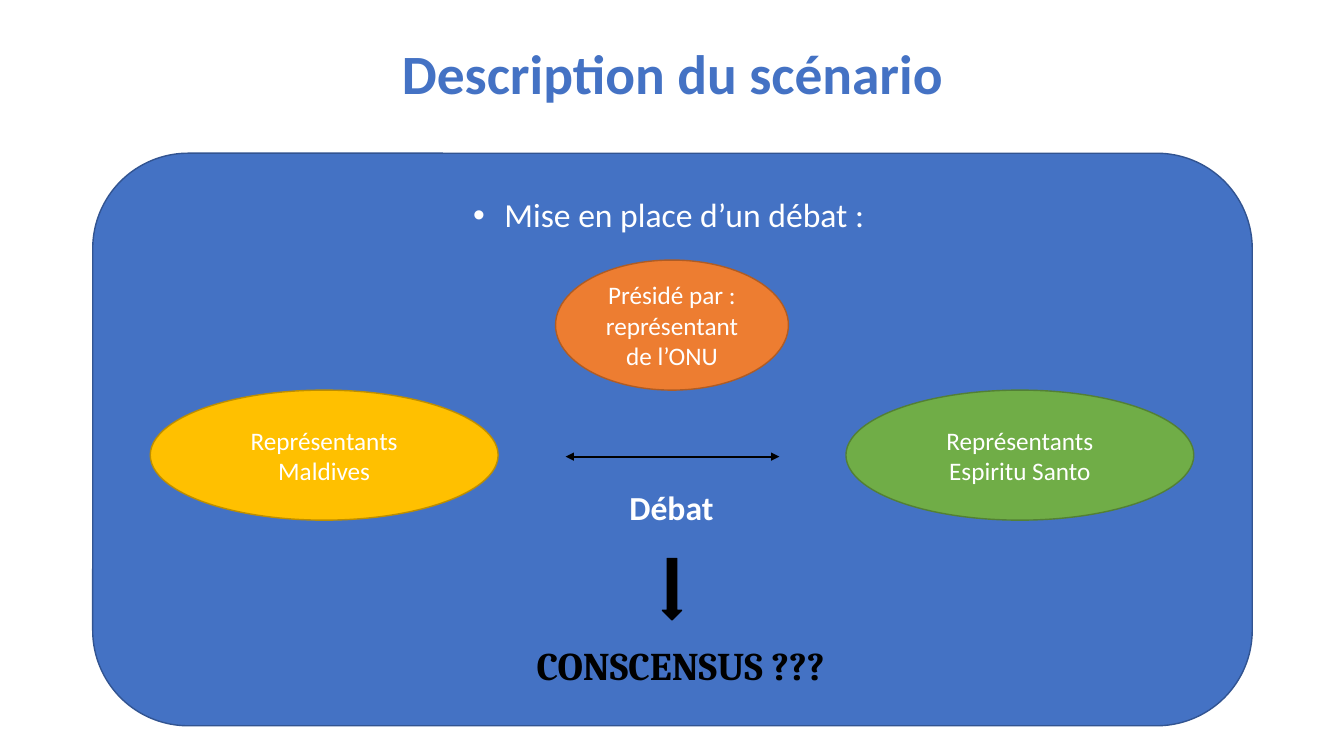
from lxml import etree
from pptx import Presentation
from pptx.dml.color import RGBColor
from pptx.enum.shapes import MSO_CONNECTOR, MSO_SHAPE
from pptx.enum.text import MSO_ANCHOR, PP_ALIGN
from pptx.oxml.ns import qn
from pptx.util import Pt

PX = 9144  # 100 px to the inch
BLUE, WHITE, BLACK = "4472C4", "FFFFFF", "000000"


def px(*sizes):
    return [size * PX for size in sizes]


def paint(color, code):
    color.rgb = RGBColor.from_string(code)


def write(frame, text, size, code, bold=False, font="Calibri"):
    """Fill the first paragraph, centred, with one run for each line."""
    frame.word_wrap = True
    para = frame.paragraphs[0]
    para.alignment = PP_ALIGN.CENTER
    for num, line in enumerate(text.split("\n")):
        if num:
            para.add_line_break()
        run = para.add_run()
        run.text = line
        run.font.name = font
        run.font.size = Pt(size)
        run.font.bold = bold
        paint(run.font.color, code)
    return para


def add_title(slide, text, box):
    title = slide.shapes.title
    title.left, title.top, title.width, title.height = px(*box)
    title.text_frame.vertical_anchor = MSO_ANCHOR.MIDDLE
    para = write(title.text_frame, text, 39.6, BLUE, True)
    para.line_spacing = 0.9


def add_form(slide, kind, box, fill, edge):
    form = slide.shapes.add_shape(kind, *px(*box))
    form.shadow.inherit = False
    form.fill.solid()
    paint(form.fill.fore_color, fill)
    paint(form.line.color, edge)
    form.line.width = Pt(1)
    form.text_frame.vertical_anchor = MSO_ANCHOR.MIDDLE
    return form


def add_panel(slide, text, box):
    panel = add_form(slide, MSO_SHAPE.ROUNDED_RECTANGLE, box, BLUE, "325491")
    frame = panel.text_frame
    frame.vertical_anchor = MSO_ANCHOR.TOP
    frame.margin_top = 13 * PX
    props = write(frame, text, 24, WHITE)._p.get_or_add_pPr()
    props.set("marL", str(31 * PX))
    props.set("indent", str(-31 * PX))
    etree.SubElement(props, qn("a:buFont")).set("typeface", "Arial")
    etree.SubElement(props, qn("a:buChar")).set("char", "•")


def add_party(slide, text, box, fill, edge):
    party = add_form(slide, MSO_SHAPE.OVAL, box, fill, edge)
    write(party.text_frame, text, 18, WHITE)


def add_label(slide, text, box, size, code, font="Calibri"):
    label = slide.shapes.add_textbox(*px(*box))
    write(label.text_frame, text, size, code, True, font)


def add_link(slide, ends):
    """Draw a line with an arrowhead at both ends."""
    link = slide.shapes.add_connector(MSO_CONNECTOR.STRAIGHT, *px(*ends))
    paint(link.line.color, BLACK)
    link.line.width = Pt(1.5)
    line = link.line._get_or_add_ln()
    for end in ("a:headEnd", "a:tailEnd"):
        etree.SubElement(line, qn(end)).set("type", "triangle")
    etree.SubElement(link._element.spPr, qn("a:effectLst"))


def main():
    deck = Presentation()
    deck.slide_width, deck.slide_height = px(1333, 750)
    slide = deck.slides.add_slide(deck.slide_layouts[5])

    add_title(slide, "Description du scénario", (92, 40, 1150, 71))
    add_panel(slide, "Mise en place d’un débat : ", (92, 152, 1150, 568))

    parties = [
        ("Présidé par : représentant de l’ONU", (551, 258, 231, 129),
         "ED7D31", "AF5C24"),
        ("Représentants\nEspiritu Santo", (839, 387, 345, 129),
         "70AD47", "538035"),
        ("Représentants Maldives", (149, 387, 345, 129),
         "FFC000", "BD8E00"),
    ]
    for party in parties:
        add_party(slide, *party)

    add_link(slide, (561, 453, 773, 453))
    add_label(slide, "Débat", (596, 478, 140, 50), 24, WHITE)
    add_form(slide, MSO_SHAPE.DOWN_ARROW, (657, 554, 19, 61), BLACK, BLACK)
    add_label(slide, "CONSCENSUS ???", (497, 631, 356, 57), 28, BLACK,
              "Cambria")
    deck.save("out.pptx")


if __name__ == "__main__":
    main()
